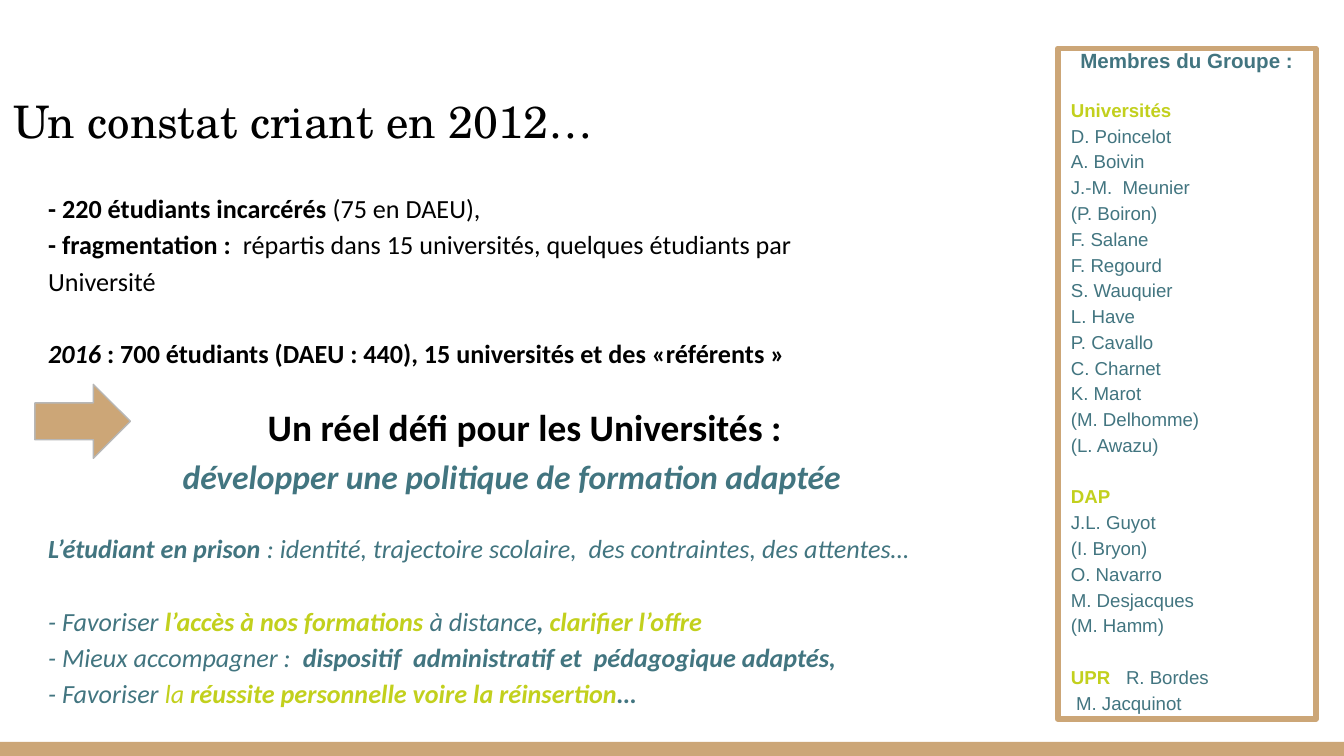
"""Build the slide on the 2012 findings about students in prison."""
from dataclasses import dataclass
from typing import NamedTuple, Optional

from lxml.etree import SubElement
from pptx import Presentation
from pptx.dml.color import RGBColor
from pptx.enum.shapes import MSO_SHAPE
from pptx.enum.text import MSO_ANCHOR, PP_ALIGN
from pptx.oxml.ns import qn
from pptx.util import Emu, Inches, Pt

SLIDE_WIDTH = Inches(10)
SLIDE_HEIGHT = Emu(SLIDE_WIDTH * 9 // 16)
UNIT = SLIDE_WIDTH // 100
BLACK = RGBColor(0x00, 0x00, 0x00)
TEAL = RGBColor(0x42, 0x75, 0x80)
LIME = RGBColor(0xC2, 0xD0, 0x1D)
SAND = RGBColor(0xCC, 0xA6, 0x77)
GREY = RGBColor(0xB7, 0xB7, 0xB7)
SERIF, SANS, PLAIN = "TeX Gyre Schola", "Calibri", "Arial"
BODY_GAP, MEMBER_GAP = 19.3, 13.8


class Area(NamedTuple):
    """Place on a grid of 100 columns, with square cells."""
    column: float
    row: float
    columns: float
    rows: float


class Insets(NamedTuple):
    """Text margins in grid units."""
    left: float = 1
    top: float = 1
    right: float = 1
    bottom: float = 1


@dataclass(frozen=True)
class Words:
    """Stretch of text in one format."""
    text: str
    color: RGBColor = BLACK
    bold: bool = False
    italic: bool = False
    size: float = 14
    font: str = SANS


@dataclass(frozen=True)
class Line:
    """Paragraph with the gap above it in points."""
    words: tuple[Words, ...]
    gap: float = 0
    align: PP_ALIGN = PP_ALIGN.LEFT
    spacing: float = 1.15
    indent: float = 0
    tab: float = 0


def units(count: float) -> Emu:
    """Convert grid units to a length."""
    return Emu(round(count * UNIT))


def add_words(paragraph, text: str, *, color: RGBColor, bold: bool, italic: bool,
              size: float, font: str) -> None:
    """Add formatted text to a paragraph."""
    run = paragraph.add_run()
    run.text = text
    run.font.name, run.font.size = font, Pt(size)
    run.font.bold, run.font.italic = bold, italic
    run.font.color.rgb = color


def write_lines(frame, lines: list[Line], insets: Insets = Insets(),
                anchor: MSO_ANCHOR = MSO_ANCHOR.TOP) -> None:
    """Fill a text frame with paragraphs."""
    frame.word_wrap = True
    frame.vertical_anchor = anchor
    frame.margin_left, frame.margin_top = units(insets.left), units(insets.top)
    frame.margin_right, frame.margin_bottom = units(insets.right), units(insets.bottom)
    for index, line in enumerate(lines):
        paragraph = frame.add_paragraph() if index else frame.paragraphs[0]
        paragraph.alignment = line.align
        paragraph.line_spacing = line.spacing
        paragraph.space_before = Pt(line.gap)
        properties = paragraph._p.get_or_add_pPr()
        if line.indent:
            properties.set("marL", str(units(line.indent)))
        if line.tab:
            stops = SubElement(properties, qn("a:tabLst"))
            SubElement(stops, qn("a:tab"), pos=str(units(line.tab)), algn="l")
        for words in line.words:
            add_words(paragraph, words.text, color=words.color, bold=words.bold,
                      italic=words.italic, size=words.size, font=words.font)


def add_text(slide, area: Area, lines: list[Line], insets: Insets = Insets(),
             anchor: MSO_ANCHOR = MSO_ANCHOR.TOP) -> None:
    """Add a text box on the grid."""
    box = slide.shapes.add_textbox(*map(units, area))
    write_lines(box.text_frame, lines, insets, anchor)


def add_figure(slide, kind: MSO_SHAPE, area: Area, fill: Optional[RGBColor] = None,
               outline: Optional[RGBColor] = None, weight: float = 0.75):
    """Add a flat preset shape on the grid."""
    figure = slide.shapes.add_shape(kind, *map(units, area))
    figure.shadow.inherit = False
    if fill is None:
        figure.fill.background()
    else:
        figure.fill.solid()
        figure.fill.fore_color.rgb = fill
    if outline is None:
        figure.line.fill.background()
    else:
        figure.line.color.rgb = outline
        figure.line.width = Pt(weight)
    return figure


def member(name: str) -> Line:
    """Return a line with a member's name."""
    return Line((Words(name, TEAL, size=10, font=PLAIN),))


def group(title: str, names: list[str], gap: float) -> list[Line]:
    """Return a heading followed by its members."""
    heading = Line((Words(title, LIME, bold=True, size=10, font=PLAIN),), gap)
    return [heading, *map(member, names)]


TITLE = [Line((Words("Un constat criant en 2012…", size=24, font=SERIF),), spacing=1)]
FINDINGS = [
    Line((Words("- 220 étudiants incarcérés ", bold=True), Words("(75 en DAEU),"))),
    Line((Words("- fragmentation :  ", bold=True),
          Words("répartis dans 15 universités, quelques étudiants par Université"))),
    Line((Words("2016 ", bold=True, italic=True),
          Words(": 700 étudiants (DAEU : 440), 15 universités et des «référents »",
                bold=True)), BODY_GAP),
]
CHALLENGE = [
    Line((Words(" ", bold=True, size=24),
          Words("Un réel défi pour les Universités : ", bold=True, size=20)),
         align=PP_ALIGN.CENTER, indent=1.8),
    Line((Words("développer une politique de formation adaptée", TEAL, True, True, 18),),
         align=PP_ALIGN.CENTER),
]
GOALS = [
    Line((Words("L’étudiant en prison ", TEAL, True, True),
          Words(": identité, trajectoire scolaire,  des contraintes, des attentes…",
                TEAL, italic=True))),
    Line((Words("- Favoriser ", TEAL, italic=True),
          Words("l’accès à nos formations ", LIME, True, True),
          Words("à distance", TEAL, italic=True),
          Words(", ", TEAL, True, True),
          Words("clarifier l’offre", LIME, True, True)), BODY_GAP),
    Line((Words("- Mieux accompagner :  ", TEAL, italic=True),
          Words("dispositif  administratif et  pédagogique adaptés,", TEAL, True, True))),
    Line((Words("- Favoriser ", TEAL, italic=True),
          Words("la ", LIME, italic=True),
          Words("réussite personnelle voire la réinsertion", LIME, True, True),
          Words("…", TEAL, True, True))),
]
MEMBERS = [
    Line((Words("Membres du Groupe :", TEAL, True, size=11, font=PLAIN),),
         align=PP_ALIGN.CENTER, spacing=1),
    *group("Universités", ["D. Poincelot", "A. Boivin", "J.-M.  Meunier", "(P. Boiron)",
                           "F. Salane", "F. Regourd", "S. Wauquier", "L. Have",
                           "P. Cavallo", "C. Charnet", "K. Marot", "(M. Delhomme)",
                           "(L. Awazu)"], 12),
    *group("DAP", ["J.L. Guyot", "(I. Bryon)", "O. Navarro", "M. Desjacques",
                   "(M. Hamm)"], MEMBER_GAP),
    Line((Words("UPR\t", LIME, True, size=10, font=PLAIN),
          Words("R. Bordes", TEAL, size=10, font=PLAIN)), MEMBER_GAP, tab=4.1),
    member(" M. Jacquinot"),
]


def main() -> None:
    """Draw the slide and save it."""
    deck = Presentation()
    deck.slide_width, deck.slide_height = SLIDE_WIDTH, SLIDE_HEIGHT
    slide = deck.slides.add_slide(deck.slide_layouts[6])
    add_figure(slide, MSO_SHAPE.RECTANGLE, Area(0, 55.2, 100, 1.05), SAND)
    add_text(slide, Area(0, 1.3, 75.1, 10.7), TITLE, anchor=MSO_ANCHOR.BOTTOM)
    add_text(slide, Area(2.6, 10.4, 57.7, 13.2), FINDINGS, Insets(top=3.6))
    add_text(slide, Area(9.2, 27.9, 59.6, 9.8), CHALLENGE, Insets(right=2.8))
    add_text(slide, Area(2.6, 35.7, 67.6, 20.8), GOALS, Insets(top=3.6))
    add_figure(slide, MSO_SHAPE.RIGHT_ARROW, Area(2.6, 28.6, 7.1, 5.5), SAND, GREY)
    panel = add_figure(slide, MSO_SHAPE.FLOWCHART_PROCESS, Area(78.7, 3.6, 19.2, 49.9),
                       outline=SAND, weight=3)
    write_lines(panel.text_frame, MEMBERS, Insets(top=0, bottom=0))
    deck.save("out.pptx")


if __name__ == "__main__":
    main()
